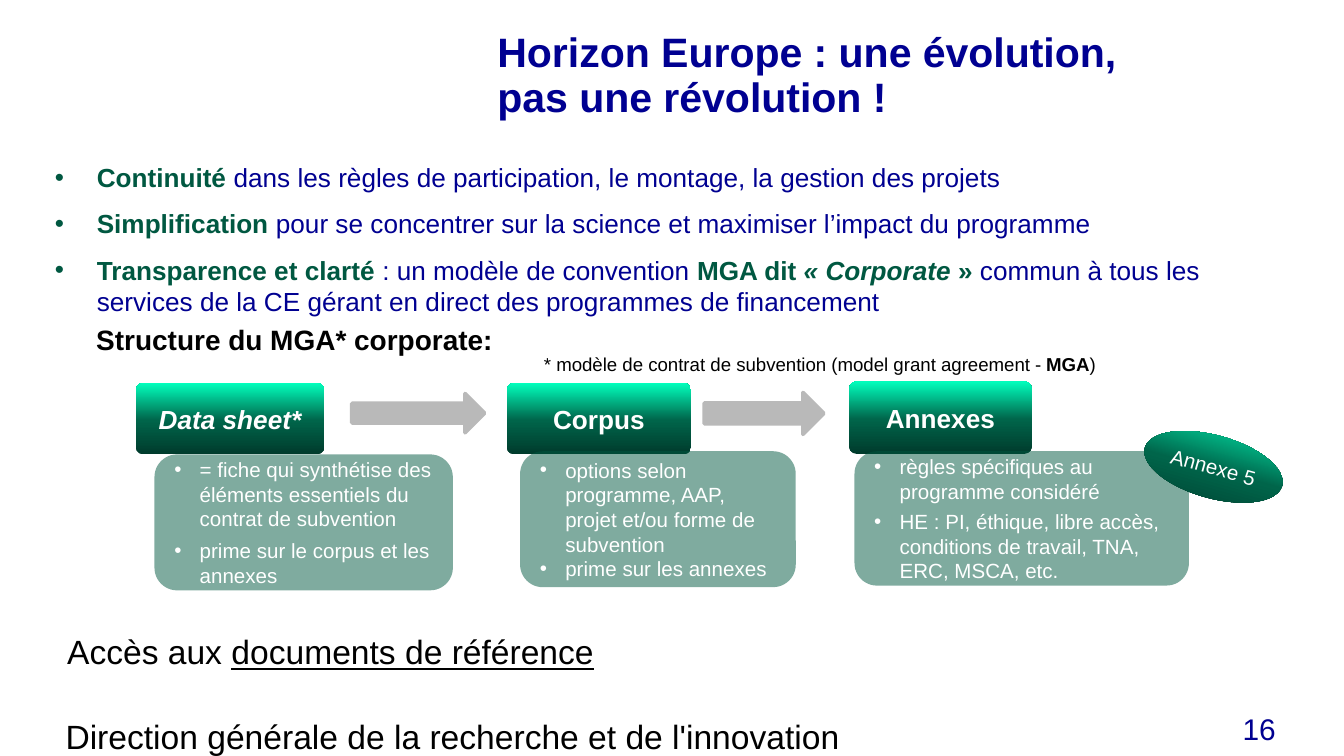
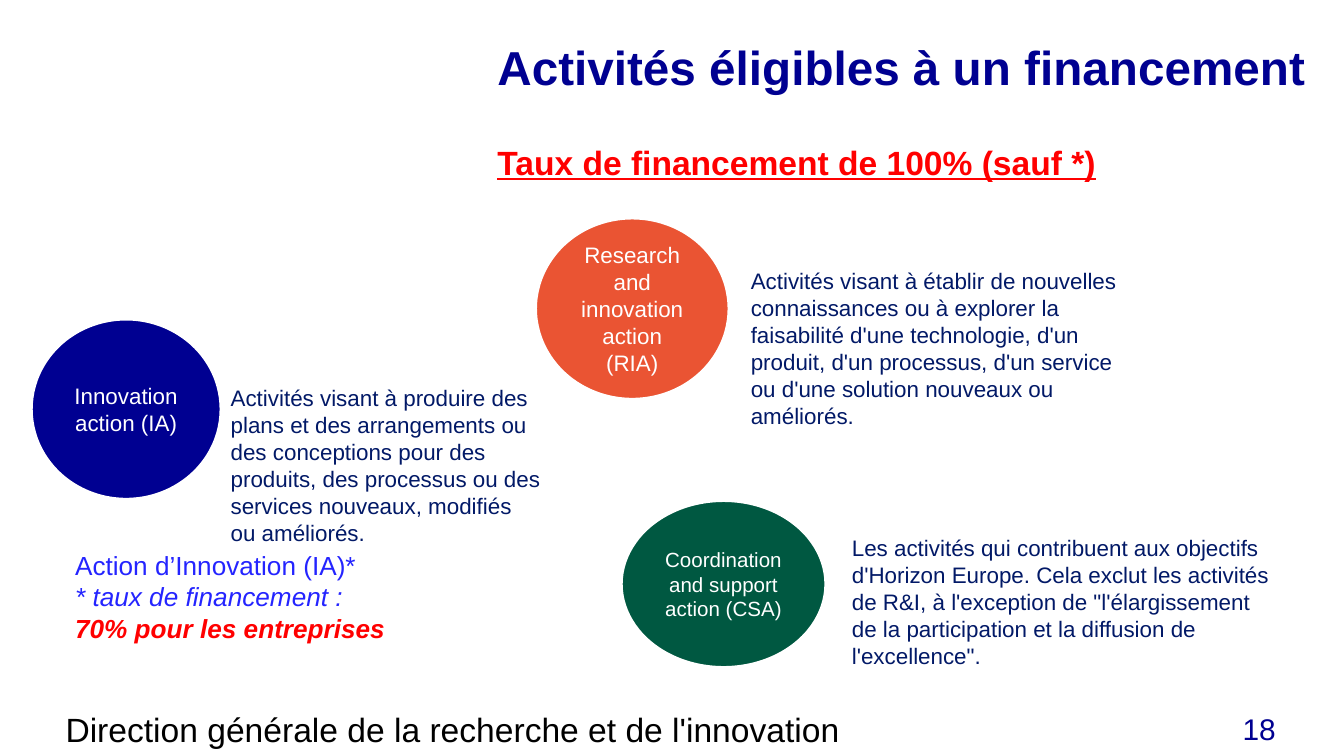
"""Build two slides on Horizon Europe: the model grant agreement and eligible activities."""
from copy import deepcopy

from lxml.etree import SubElement as Sub
from pptx import Presentation
from pptx.dml.color import RGBColor as RGB
from pptx.enum.shapes import MSO_SHAPE as Kind
from pptx.enum.text import MSO_ANCHOR as Anchor, MSO_AUTO_SIZE as Auto, PP_ALIGN as Align
from pptx.oxml.ns import qn
from pptx.util import Cm, Pt

HUES = {
    "navy": "000091", "green": "005841", "white": "FFFFFF", "black": "000000",
    "red": "FF0000", "grey": "B9B9B9", "ink": "021967", "blue": "2424FF",
    "coral": "EA5433", "dark": "003B2C", "mid": "00654A", "mint": "02FFBD",
}
RAMP = [("dark", 0), ("mid", 0.48), ("mint", 1)]
MARK = {"bold": True, "hue": "green"}
LEFT = {"alignment": Align.LEFT}
HEAD = {"alignment": Align.LEFT, "line_spacing": 0.9}
MID = {"alignment": Align.CENTER}
FLUSH = {"margin_left": 0, "margin_top": 0, "margin_right": 0, "margin_bottom": 0}


def write(box, paras, size, hue, form=LEFT, dent=0, gap=0, inset={}, **font):
    """Fill a box with paragraphs made of plain strings or (string, format) runs."""
    frame = box.text_frame
    frame.word_wrap = True
    frame.auto_size = Auto.NONE
    for key, val in inset.items():
        setattr(frame, key, val)
    for spot, runs in enumerate(paras):
        para = frame.add_paragraph() if spot else frame.paragraphs[0]
        if dent:
            props = para._p.get_or_add_pPr()
            props.set("marL", str(Cm(dent)))
            props.set("indent", str(-Cm(dent)))
            Sub(props, qn("a:buFont"), typeface="Arial")
            Sub(props, qn("a:buChar"), char="•")
        for key, val in form.items():
            setattr(para, key, val)
        if spot and gap:
            para.space_before = Pt(gap)
        for item in [runs] if isinstance(runs, str) else runs:
            text, own = (item, {}) if isinstance(item, str) else item
            if text == "\n":
                para.add_line_break()
                continue
            run = para.add_run()
            run.text = text
            look = {"name": "Arial", "size": size, "hue": hue, **font, **own}
            run.font.color.rgb = RGB.from_string(HUES[look.pop("hue")])
            look["size"] = Pt(look["size"])
            for key, val in look.items():
                setattr(run.font, key, val)


def draw(slide, kind, place, fill, line=None, width=2):
    """Add a preset shape with a solid or graded fill."""
    shape = slide.shapes.add_shape(kind, *map(Cm, place))
    shape.shadow.inherit = False
    if fill == "ramp":
        shape.fill.gradient()
        shape.fill.gradient_angle = 90
        stops = shape._element.spPr.find(".//" + qn("a:gsLst"))
        stops.append(deepcopy(stops[0]))
        for stop, (hue, spot) in zip(shape.fill.gradient_stops, RAMP):
            stop.color.rgb = RGB.from_string(HUES[hue])
            stop.position = spot
    else:
        shape.fill.solid()
        shape.fill.fore_color.rgb = RGB.from_string(HUES[fill])
    if line:
        shape.line.color.rgb = RGB.from_string(HUES[line])
        shape.line.width = Pt(width)
    else:
        shape.line.fill.background()
    shape.text_frame.vertical_anchor = Anchor.MIDDLE
    return shape


deck = Presentation()
deck.slide_width, deck.slide_height = Cm(25.4), Cm(14.29)

pages = [
    ("16", (9.4, 0.61, 12.45, 2.01), (0.99, 13.41, 15.54, 0.86), 22,
     [["Horizon Europe : une évolution, ", "\n", "pas une révolution !"]]),
    ("18", (9.4, 0.84, 15.72, 1.09), (0.99, 13.28, 16.41, 0.99), 25.5,
     ["Activités éligibles à un financement",
      [("Taux de financement de 100% (sauf *)", {"size": 18, "hue": "red", "underline": True})]]),
]
slides = []
for num, spot, foot, size, lines in pages:
    slide = deck.slides.add_slide(deck.slide_layouts[5])
    title = slide.shapes.title
    for key, val in zip(("left", "top", "width", "height"), spot):
        setattr(title, key, Cm(val))
    title.text_frame.vertical_anchor = Anchor.TOP
    write(title, lines, size, "navy", HEAD, gap=27, inset=FLUSH, bold=True)
    box = slide.shapes.add_textbox(*map(Cm, foot))
    write(box, ["Direction générale de la recherche et de l'innovation"], 18, "black")
    box = slide.shapes.add_textbox(*map(Cm, (21.11, 13.31, 3.25, 0.97)))
    write(box, [num], 16, "navy", {"alignment": Align.RIGHT})
    slides.append(slide)
grant, funds = slides

body = grant.shapes.add_textbox(*map(Cm, (1.04, 3.05, 23.39, 3)))
write(body, [
    [("Continuité", MARK),
     " dans les règles de participation, le montage, la gestion des projets"],
    [("Simplification ", MARK),
     "pour se concentrer sur la science et maximiser l’impact du programme"],
    [("Transparence et clarté ", MARK), ": un modèle de convention ", ("MGA dit", MARK),
     (" « Corporate ", {**MARK, "italic": True}), ("»", MARK),
     " commun à tous les services de la CE gérant en direct des programmes de financement"],
], 14, "navy", {**LEFT, "space_after": Pt(8)}, dent=0.79, inset=FLUSH)

tabs = [
    ("Data sheet*", (2.57, 7.24, 3.56, 1.35), True),
    ("Corpus", (9.58, 7.24, 3.48, 1.35), False),
    ("Annexes", (16.05, 7.21, 3.45, 1.37), False),
]
for name, place, slant in tabs:
    tab = draw(grant, Kind.ROUNDED_RECTANGLE, place, "ramp")
    tab.adjustments[0] = 0.1
    write(tab, [name], 14, "white", MID, bold=True, italic=slant)

for place in [(6.65, 7.44, 2.51, 0.74), (13.31, 7.42, 2.26, 0.79)]:
    draw(grant, Kind.RIGHT_ARROW, place, "grey", "grey")

panes = [
    ((9.83, 8.53, 5.21, 2.57), 0,
     ["options selon programme, AAP, projet et/ou forme de subvention",
      "prime sur les annexes"]),
    ((16.15, 8.53, 6.32, 2.54), 3,
     ["règles spécifiques au programme considéré",
      "HE : PI, éthique, libre accès, conditions de travail, TNA, ERC, MSCA, etc."]),
    ((2.92, 8.59, 5.64, 2.57), 4,
     ["= fiche qui synthétise des éléments essentiels du contrat de subvention",
      "prime sur le corpus et les annexes"]),
]
for place, gap, lines in panes:
    pane = draw(grant, Kind.ROUNDED_RECTANGLE, place, "green")
    Sub(pane._element.spPr.find(".//" + qn("a:srgbClr")), qn("a:alpha"), val="50000")
    write(pane, lines, 11, "white", dent=0.48, gap=gap)

badge = draw(grant, Kind.OVAL, (21.59, 8.23, 2.69, 1.19), "ramp")
badge.rotation = 15.5
write(badge, ["Annexe 5"], 11, "white", MID, inset={**FLUSH, "word_wrap": False})

notes = [
    (grant, (1.57, 5.97, 9.8, 0.89), 15, "black",
     [[("Structure du MGA* corporate:", {"bold": True})]]),
    (grant, (10.03, 6.55, 12.7, 0.69), 10, "black",
     [["* modèle de contrat de subvention (model grant agreement - ",
       ("MGA", {"bold": True}), ")"]]),
    (grant, (1.02, 11.81, 14.02, 1.02), 18, "black",
     [["Accès aux ", ("documents de référence", {"underline": True})]]),
    (funds, (13.94, 4.93, 7.67, 3.33), 12, "ink",
     ["Activités visant à établir de nouvelles connaissances ou à explorer la faisabilité "
      "d'une technologie, d'un produit, d'un processus, d'un service ou d'une solution "
      "nouveaux ou améliorés."]),
    (funds, (4.11, 7.14, 6.4, 3.33), 12, "ink",
     ["Activités visant à produire des plans et des arrangements ou des conceptions pour des "
      "produits, des processus ou des services nouveaux, modifiés ou améliorés."]),
    (funds, (15.85, 9.98, 8.53, 2.82), 12, "ink",
     ["Les activités qui contribuent aux objectifs d'Horizon Europe. Cela exclut les activités "
      "de R&I, à l'exception de \"l'élargissement de la participation et la diffusion de "
      "l'excellence\"."]),
    (funds, (1.17, 10.26, 7.62, 2.06), 14, "blue",
     ["Action d’Innovation (IA)*",
      [("* taux de financement :", {"italic": True})],
      [("70% pour les entreprises", {"italic": True, "bold": True, "hue": "red"})]]),
]
for slide, place, size, hue, lines in notes:
    write(slide.shapes.add_textbox(*map(Cm, place)), lines, size, hue)

discs = [
    ("Research and innovation action (RIA)", (10.11, 4.11, 3.68, 3.45), "coral", 12),
    ("Innovation action (IA)", (0.58, 6.02, 3.61, 3.43), "navy", 12),
    ("Coordination and support action (CSA)", (11.73, 9.45, 3.89, 3.18), "green", 11),
]
for name, place, hue, size in discs:
    disc = draw(funds, Kind.OVAL, place, hue, "white", 2.25)
    write(disc, [name], size, "white", MID)

deck.save("out.pptx")
